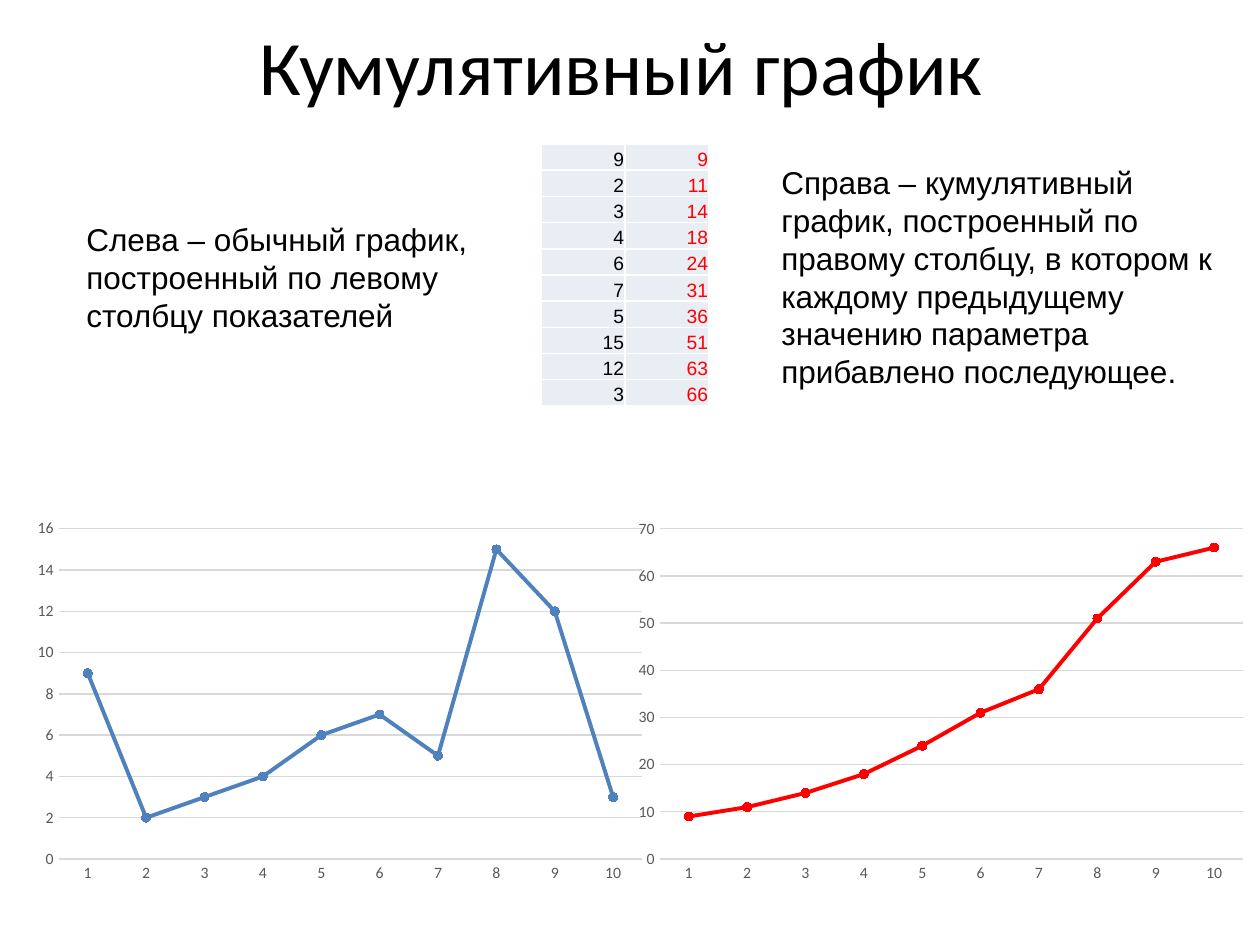
from itertools import accumulate

from lxml import etree
from pptx import Presentation
from pptx.chart.data import CategoryChartData
from pptx.dml.color import RGBColor
from pptx.enum.chart import XL_CHART_TYPE, XL_MARKER_STYLE, XL_TICK_MARK
from pptx.enum.text import MSO_ANCHOR, MSO_AUTO_SIZE, PP_ALIGN
from pptx.oxml.ns import qn
from pptx.util import Pt

LINE_CHART = XL_CHART_TYPE.LINE_MARKERS_STACKED
CIRCLE = XL_MARKER_STYLE.CIRCLE
NO_TICK = XL_TICK_MARK.NONE
MIDDLE, BOTTOM = MSO_ANCHOR.MIDDLE, MSO_ANCHOR.BOTTOM
CENTER, RIGHT = PP_ALIGN.CENTER, PP_ALIGN.RIGHT
GROW = MSO_AUTO_SIZE.SHAPE_TO_FIT_TEXT

BLACK, RED, BLUE = "000000", "FF0000", "4F81BD"
GRID, LABEL, CELL, WHITE = "D9D9D9", "595959", "E9EDF4", "FFFFFF"
VALUES = [9, 2, 3, 4, 6, 7, 5, 15, 12, 3]
TOTALS = list(accumulate(VALUES))


def px(n):
    return round(n * 914400 / 126)


def rgb(color):
    return RGBColor.from_string(color)


def style_font(font, name, size, color):
    font.name = name
    font.size = Pt(size)
    font.color.rgb = rgb(color)


def style_line(line, color, width):
    line.color.rgb = rgb(color)
    line.width = Pt(width)


def add_run(p, text, name, size, color):
    r = p.add_run()
    r.text = text
    style_font(r.font, name, size, color)


def set_title(s, text, x, y, w, h):
    sp = s.shapes.title
    sp.left, sp.top, sp.width, sp.height = map(px, (x, y, w, h))
    tf = sp.text_frame
    tf.vertical_anchor = MIDDLE
    p = tf.paragraphs[0]
    p.alignment = CENTER
    add_run(p, text, "Calibri", 44, BLACK)


def add_text(s, text, x, y, w, h):
    tf = s.shapes.add_textbox(px(x), px(y), px(w), px(h)).text_frame
    tf.word_wrap = True
    tf.auto_size = GROW
    add_run(tf.paragraphs[0], text, "Arial", 18, BLACK)


def set_borders(cell, color, width):
    tc_pr = cell._tc.get_or_add_tcPr()
    for i, side in enumerate(("a:lnL", "a:lnR", "a:lnT", "a:lnB")):
        ln = etree.Element(qn(side), w=str(Pt(width)))
        fill = etree.SubElement(ln, qn("a:solidFill"))
        etree.SubElement(fill, qn("a:srgbClr"), val=color)
        tc_pr.insert(i, ln)


def fill_cell(cell, text, color):
    cell.fill.solid()
    cell.fill.fore_color.rgb = rgb(CELL)
    cell.margin_left = cell.margin_right = cell.margin_top = px(1)
    cell.margin_bottom = 0
    cell.vertical_anchor = BOTTOM
    set_borders(cell, WHITE, 1)
    p = cell.text_frame.paragraphs[0]
    p.alignment = RIGHT
    add_run(p, text, "Arial", 11, color)


def add_value_table(s, columns, x, y, w, h):
    rows = len(columns[0][0])
    table = s.shapes.add_table(rows, len(columns), px(x), px(y), px(w), px(h)).table
    table.first_row = table.horz_banding = False
    for j, (values, color) in enumerate(columns):
        for i, value in enumerate(values):
            fill_cell(table.cell(i, j), str(value), color)


def add_line_chart(s, values, color, top, step, x, y, w, h):
    data = CategoryChartData()
    data.categories = [str(i + 1) for i in range(len(values))]
    data.add_series("Series 1", values)
    chart = s.shapes.add_chart(LINE_CHART, px(x), px(y), px(w), px(h), data).chart
    chart.has_legend = chart.has_title = False
    style_font(chart.font, "Calibri", 10, BLACK)

    for axis in (chart.category_axis, chart.value_axis):
        axis.major_tick_mark = axis.minor_tick_mark = NO_TICK
        style_font(axis.tick_labels.font, "Calibri", 9, LABEL)
    style_line(chart.category_axis.format.line, GRID, 0.75)
    axis = chart.value_axis
    axis.format.line.fill.background()
    axis.minimum_scale, axis.maximum_scale, axis.major_unit = 0, top, step
    axis.has_major_gridlines = True
    style_line(axis.major_gridlines.format.line, GRID, 0.75)

    chart.plots[0].vary_by_categories = False
    series = chart.plots[0].series[0]
    series.smooth = False
    style_line(series.format.line, color, 2.25)
    marker = series.marker
    marker.style, marker.size = CIRCLE, 5
    marker.format.fill.solid()
    marker.format.fill.fore_color.rgb = rgb(color)
    style_line(marker.format.line, color, 0.75)


def main():
    prs = Presentation()
    prs.slide_width, prs.slide_height = px(1260), px(945)
    s = prs.slides.add_slide(prs.slide_layouts[5])
    set_title(s, "Кумулятивный график ", 63, -14, 1134, 158)
    add_value_table(s, [(VALUES, BLACK), (TOTALS, RED)], 541, 144, 168, 262)
    add_line_chart(s, VALUES, BLUE, 16, 2, 25, 512, 630, 378)
    add_line_chart(s, TOTALS, RED, 70, 10, 626, 512, 630, 378)
    add_text(s, "Слева – обычный график, построенный по левому столбцу показателей",
             74, 214, 456, 127)
    add_text(s, "Справа – кумулятивный график, построенный по правому столбцу, "
             "в котором к каждому предыдущему значению параметра прибавлено последующее.",
             769, 157, 456, 242)
    prs.save("out.pptx")


if __name__ == "__main__":
    main()
